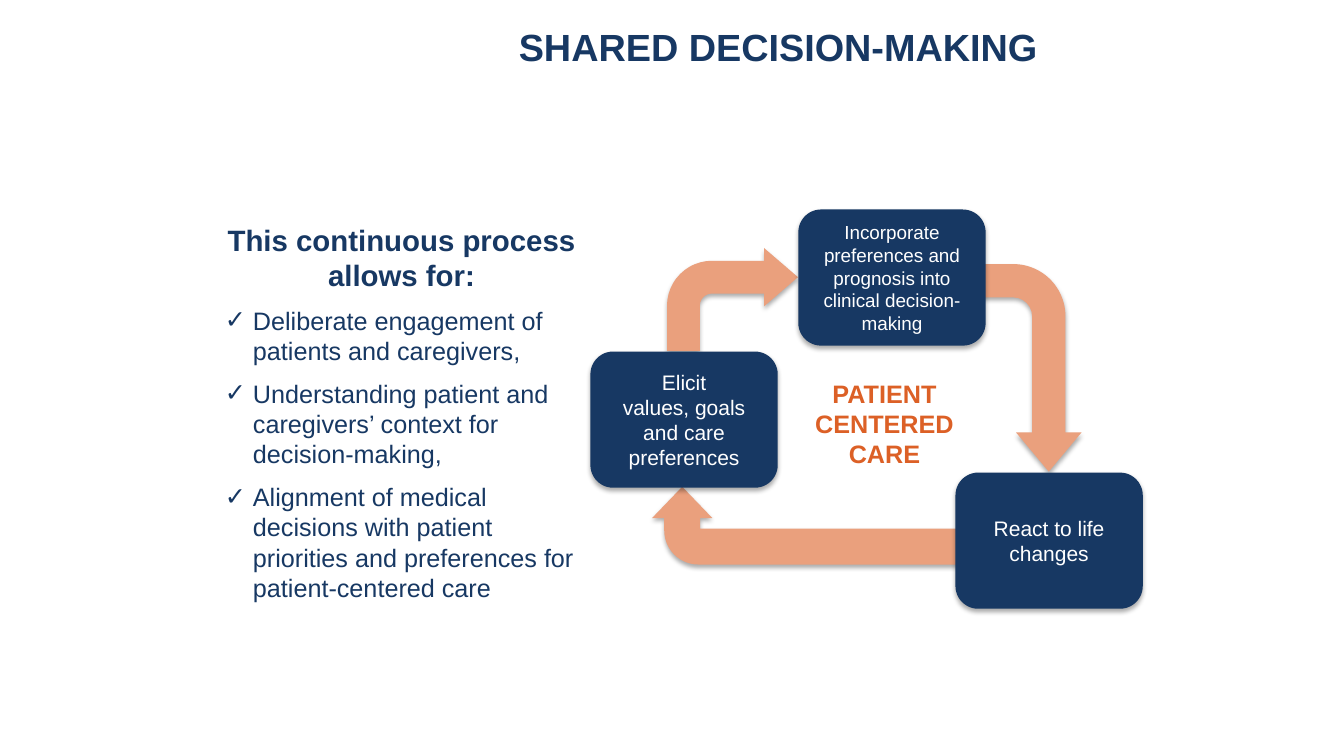
from dataclasses import dataclass

from lxml.etree import SubElement
from pptx import Presentation
from pptx.dml.color import RGBColor
from pptx.enum.shapes import MSO_SHAPE
from pptx.enum.text import MSO_ANCHOR, MSO_AUTO_SIZE, PP_ALIGN
from pptx.oxml.ns import qn
from pptx.util import Cm, Pt


@dataclass(frozen=True)
class Theme:
    font: str = "Arial"
    navy: str = "173863"
    salmon: str = "EAA07D"
    orange: str = "DC6026"
    white: str = "FFFFFF"
    shadow: str = "000000"
    title: float = 27
    heading: float = 21
    body: float = 18
    step: float = 15
    long_step: float = 13.5


THEME = Theme()
STEP_WIDTH, STEP_HEIGHT = 4.72, 3.43

BENEFITS = [
    "Deliberate engagement of patients and caregivers,",
    "Understanding patient and caregivers’ context for decision-making,",
    "Alignment of medical decisions with patient priorities and preferences "
    "for patient-centered care",
]
# left, top, width, height (cm), rotation, adjustments
ARROWS = [
    (16.81, 6.25, 3.3, 2.59, 0, (0.319, 0.284, 0.33, 0.438)),
    (23.14, 7.77, 5.23, 3.0, 90, (0.28, 0.275, 0.329, 0.438)),
    (19.33, 9.37, 1.96, 7.75, 270, (0.463, 0.387, 0.402, 0.438)),
]
# left, top (cm), text size, paragraphs
STEPS = [
    (14.88, 8.86, THEME.step, ["Elicit", "values, goals and care preferences"]),
    (20.12, 5.28, THEME.long_step,
     ["Incorporate preferences and prognosis into clinical decision-making"]),
    (24.08, 11.91, THEME.step, ["React to life changes"]),
]


def place(box, left, top, width, height):
    box.left, box.top, box.width, box.height = map(Cm, (left, top, width, height))


def style(paragraph, size, color, bold=False, align=PP_ALIGN.CENTER):
    paragraph.alignment = align
    font = paragraph.font
    font.name, font.size, font.bold = THEME.font, Pt(size), bold
    font.color.rgb = RGBColor.from_string(color)


def set_bullet(paragraph, mark=None, indent=0):
    """Give the paragraph a hanging bullet, or none when there is no mark."""
    properties = paragraph._p.get_or_add_pPr()
    properties.set("marL", str(Cm(indent)))
    properties.set("indent", str(-Cm(indent)))
    if mark:
        SubElement(properties, qn("a:buFont"), typeface=THEME.font)
        SubElement(properties, qn("a:buChar"), char=mark)
    else:
        SubElement(properties, qn("a:buNone"))


def add_soft_shadow(shape):
    effects = SubElement(shape._element.spPr, qn("a:effectLst"))
    shadow = SubElement(effects, qn("a:outerShdw"), blurRad=str(Pt(3.5)),
                        dist=str(Pt(2.2)), dir="5400000", rotWithShape="0")
    color = SubElement(shadow, qn("a:srgbClr"), val=THEME.shadow)
    SubElement(color, qn("a:alpha"), val="32000")


def add_filled(cycle, preset, bounds, color):
    shape = cycle.shapes.add_shape(preset, *map(Cm, bounds))
    shape.fill.solid()
    shape.fill.fore_color.rgb = RGBColor.from_string(color)
    shape.line.fill.background()
    add_soft_shadow(shape)
    return shape


def add_arrow(cycle, bounds, rotation, adjustments):
    arrow = add_filled(cycle, MSO_SHAPE.BENT_ARROW, bounds, THEME.salmon)
    arrow.rotation = rotation
    for index, value in enumerate(adjustments):
        arrow.adjustments[index] = value


def add_step(cycle, left, top, size, lines):
    bounds = (left, top, STEP_WIDTH, STEP_HEIGHT)
    step = add_filled(cycle, MSO_SHAPE.ROUNDED_RECTANGLE, bounds, THEME.navy)
    frame = step.text_frame
    frame.word_wrap = True
    frame.vertical_anchor = MSO_ANCHOR.MIDDLE
    frame.text = "\n".join(lines)
    for paragraph in frame.paragraphs:
        style(paragraph, size, THEME.white)


def add_cycle_label(cycle, text):
    label = cycle.shapes.add_textbox(Cm(20.12), Cm(9.4), Cm(4.34), Cm(2.57))
    label.text_frame.word_wrap = True
    label.text_frame.text = text
    style(label.text_frame.paragraphs[0], THEME.body, THEME.orange, bold=True)


def fill_title(title, text):
    place(title, 9.88, 0.38, 19.46, 1.7)
    frame = title.text_frame
    frame.text = text
    frame.auto_size = MSO_AUTO_SIZE.NONE
    frame.vertical_anchor = MSO_ANCHOR.MIDDLE
    heading = frame.paragraphs[0]
    heading.line_spacing = 0.9
    style(heading, THEME.title, THEME.navy, bold=True)


def fill_benefits(body, heading_text, benefits):
    place(body, 5.41, 5.46, 9.42, 10.03)
    frame = body.text_frame
    frame.auto_size = MSO_AUTO_SIZE.NONE
    frame.vertical_anchor = MSO_ANCHOR.TOP
    frame.text = "\n".join([heading_text, *benefits])
    heading, *items = frame.paragraphs
    heading.space_before, heading.space_after = Pt(0), Pt(4.5)
    set_bullet(heading)
    style(heading, THEME.heading, THEME.navy, bold=True)
    for item in items:
        item.space_before = item.space_after = Pt(4.5)
        set_bullet(item, "✓", 0.71)
        style(item, THEME.body, THEME.navy, align=PP_ALIGN.LEFT)


def main():
    deck = Presentation()
    deck.slide_width, deck.slide_height = Cm(33.87), Cm(19.05)
    slide = deck.slides.add_slide(deck.slide_layouts.get_by_name("Title and Content"))
    fill_title(slide.shapes.title, "SHARED DECISION-MAKING")
    fill_benefits(slide.placeholders[1], "This continuous process allows for:", BENEFITS)

    cycle = slide.shapes.add_group_shape()
    for *bounds, rotation, adjustments in ARROWS:
        add_arrow(cycle, bounds, rotation, adjustments)
    for step in STEPS:
        add_step(cycle, *step)
    add_cycle_label(cycle, "PATIENT CENTERED CARE")
    deck.save("out.pptx")


if __name__ == "__main__":
    main()
